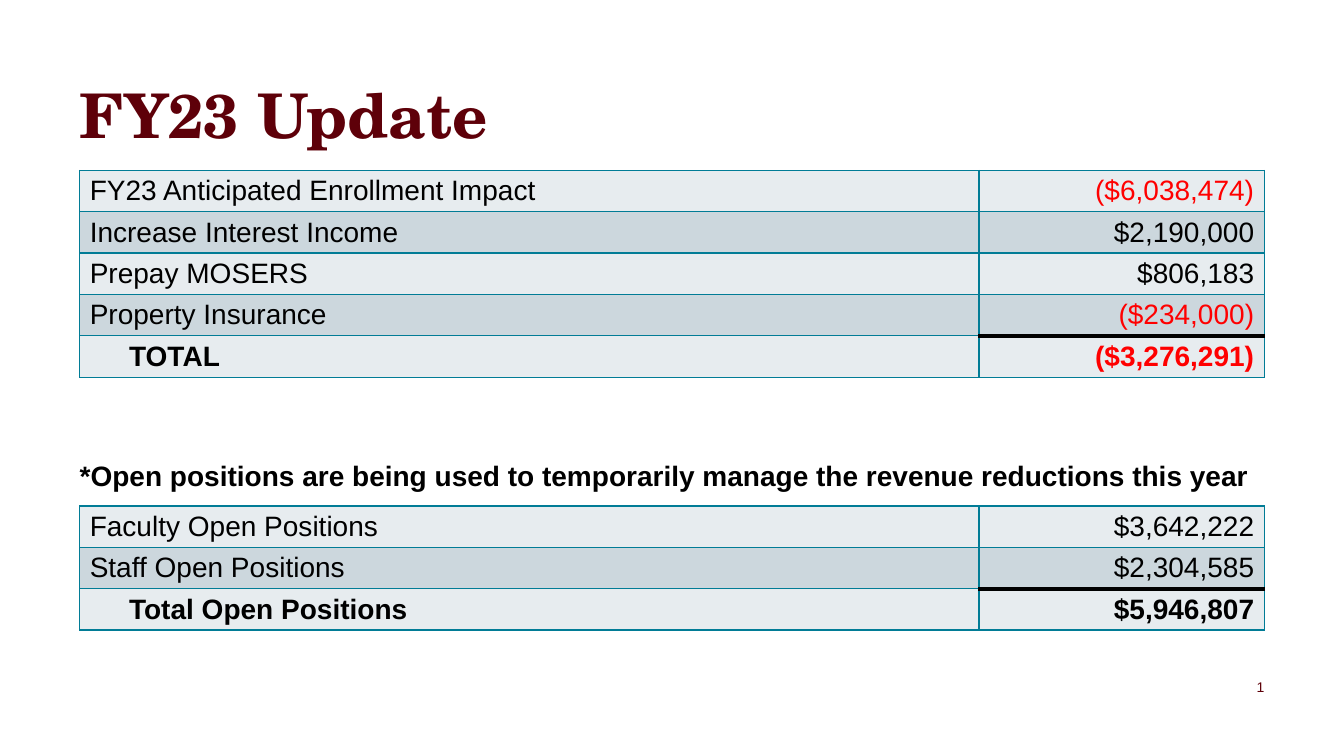
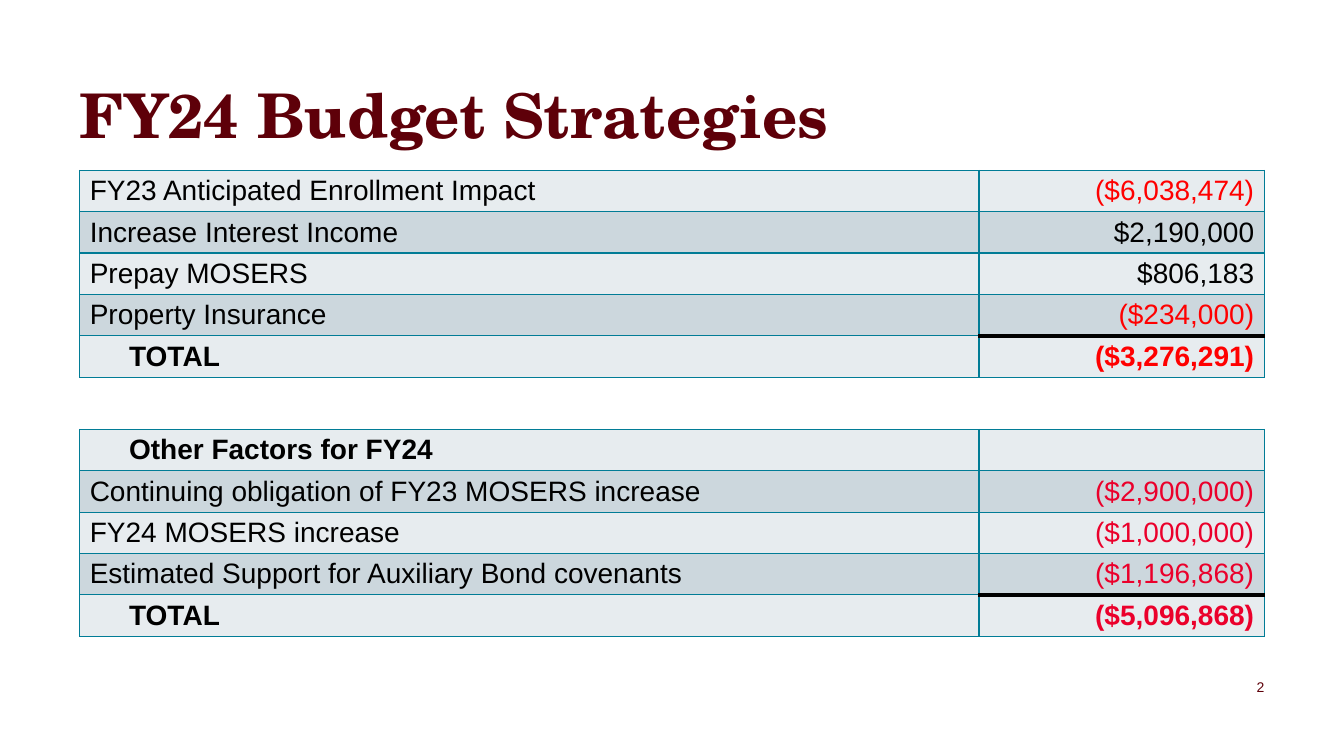
from lxml import etree
from pptx import Presentation
from pptx.dml.color import RGBColor
from pptx.enum.text import MSO_ANCHOR, MSO_AUTO_SIZE, PP_ALIGN
from pptx.oxml.ns import qn
from pptx.util import Inches, Pt

LEFT, RIGHT = PP_ALIGN.LEFT, PP_ALIGN.RIGHT
TOP, MIDDLE, BOTTOM = MSO_ANCHOR.TOP, MSO_ANCHOR.MIDDLE, MSO_ANCHOR.BOTTOM
NO_FIT = MSO_AUTO_SIZE.NONE

MAROON, TEAL, BLACK = "5E0009", "017C96", "000000"
RED, CRIMSON = "FF0000", "EB002B"
BANDS = ["E7ECEF", "CCD7DD"]
BODY_FONT, TITLE_FONT = "Arial", "TeX Gyre Schola"
MARGIN, CONTENT_WIDTH = 0.79, 11.75
COLUMNS, ROW_HEIGHT = [8.92, 2.83], 0.41
CELL_MARGIN, TOTAL_INDENT = 0.1, 0.39


def write(frame, text, size=20, font=BODY_FONT, color=BLACK, bold=False,
          align=LEFT, anchor=TOP, spacing=1.0, inset=0):
    frame.word_wrap = True
    frame.auto_size = NO_FIT
    frame.vertical_anchor = anchor
    frame.margin_left = frame.margin_right = Inches(inset)
    frame.margin_top = frame.margin_bottom = Inches(inset)
    paragraph = frame.paragraphs[0]
    paragraph.alignment = align
    paragraph.line_spacing = spacing
    run = paragraph.add_run()
    run.text = text
    run.font.size = Pt(size)
    run.font.name = font
    run.font.bold = bold
    run.font.color.rgb = RGBColor.from_string(color)
    return run


def add_budget_table(slide, top, rows, negative):
    table = slide.shapes.add_table(
        len(rows), len(COLUMNS), Inches(MARGIN), Inches(top),
        Inches(CONTENT_WIDTH), Inches(ROW_HEIGHT * len(rows))).table
    table.first_row = False
    table.horz_banding = False
    for column, width in zip(table.columns, COLUMNS):
        column.width = Inches(width)
    last = len(rows) - 1
    for r, (label, amount, strong) in enumerate(rows):
        table.rows[r].height = Inches(ROW_HEIGHT)
        for c, text in enumerate([label, amount]):
            cell = table.cell(r, c)
            cell.fill.solid()
            cell.fill.fore_color.rgb = RGBColor.from_string(BANDS[r % 2])
            if text:
                run = write(cell.text_frame, text, bold=strong,
                            align=RIGHT if c else LEFT,
                            color=negative if text.startswith("(") else BLACK)
            cell.margin_left = Inches(TOTAL_INDENT + CELL_MARGIN if strong and c == 0 else CELL_MARGIN)
            cell.margin_right = Inches(CELL_MARGIN)
            cell.margin_top = cell.margin_bottom = Inches(0.05)
            properties = cell._tc.get_or_add_tcPr()
            for position, side in enumerate(["lnL", "lnR", "lnT", "lnB"]):
                total_rule = c == 1 and (r, side) in [(last - 1, "lnB"), (last, "lnT")]
                border = etree.Element(qn(f"a:{side}"), w=str(Pt(3 if total_rule else 1)))
                fill = etree.SubElement(border, qn("a:solidFill"))
                etree.SubElement(fill, qn("a:srgbClr"), val=BLACK if total_rule else TEAL)
                properties.insert(position, border)


enrollment_rows = [
    ("FY23 Anticipated Enrollment Impact", "($6,038,474)", False),
    ("Increase Interest Income", "$2,190,000", False),
    ("Prepay MOSERS", "$806,183", False),
    ("Property Insurance", "($234,000)", False),
    ("TOTAL", "($3,276,291)", True),
]
open_position_rows = [
    ("Faculty Open Positions", "$3,642,222", False),
    ("Staff Open Positions", "$2,304,585", False),
    ("Total Open Positions", "$5,946,807", True),
]
other_factor_rows = [
    ("Other Factors for FY24", "", True),
    ("Continuing obligation of FY23 MOSERS increase", "($2,900,000)", False),
    ("FY24 MOSERS increase", "($1,000,000)", False),
    ("Estimated Support for Auxiliary Bond covenants", "($1,196,868)", False),
    ("TOTAL", "($5,096,868)", True),
]
pages = [
    ("FY23 Update",
     "*Open positions are being used to temporarily manage the revenue reductions this year",
     5.02, open_position_rows),
    ("FY24 Budget Strategies", None, 4.26, other_factor_rows),
]

deck = Presentation()
deck.slide_width, deck.slide_height = Inches(13.33), Inches(7.5)

for number, (heading, remark, second_top, second_rows) in enumerate(pages, 1):
    slide = deck.slides.add_slide(deck.slide_layouts[5])
    title = slide.shapes.title
    title.left, title.top = Inches(MARGIN), Inches(0.75)
    title.width, title.height = Inches(CONTENT_WIDTH), Inches(0.75)
    write(title.text_frame, heading, size=44, font=TITLE_FONT, color=MAROON,
          bold=True, anchor=BOTTOM)

    add_budget_table(slide, 1.69, enrollment_rows, RED)
    if remark:
        remark_box = slide.shapes.add_textbox(
            Inches(MARGIN), Inches(4.48), Inches(CONTENT_WIDTH), Inches(0.54))
        write(remark_box.text_frame, remark, bold=True, spacing=1.2)
    add_budget_table(slide, second_top, second_rows, CRIMSON)

    page_box = slide.shapes.add_textbox(Inches(11.79), Inches(6.63), Inches(0.75), Inches(0.37))
    page_run = write(page_box.text_frame, str(number), size=10, color=MAROON,
                     align=RIGHT, anchor=MIDDLE)._r
    field = etree.Element(qn("a:fld"), type="slidenum",
                          id="{B6F15528-21DE-4FAA-801E-634DDDAF4B2B}")
    page_run.getparent().replace(page_run, field)
    field.extend(list(page_run))

deck.save("out.pptx")
